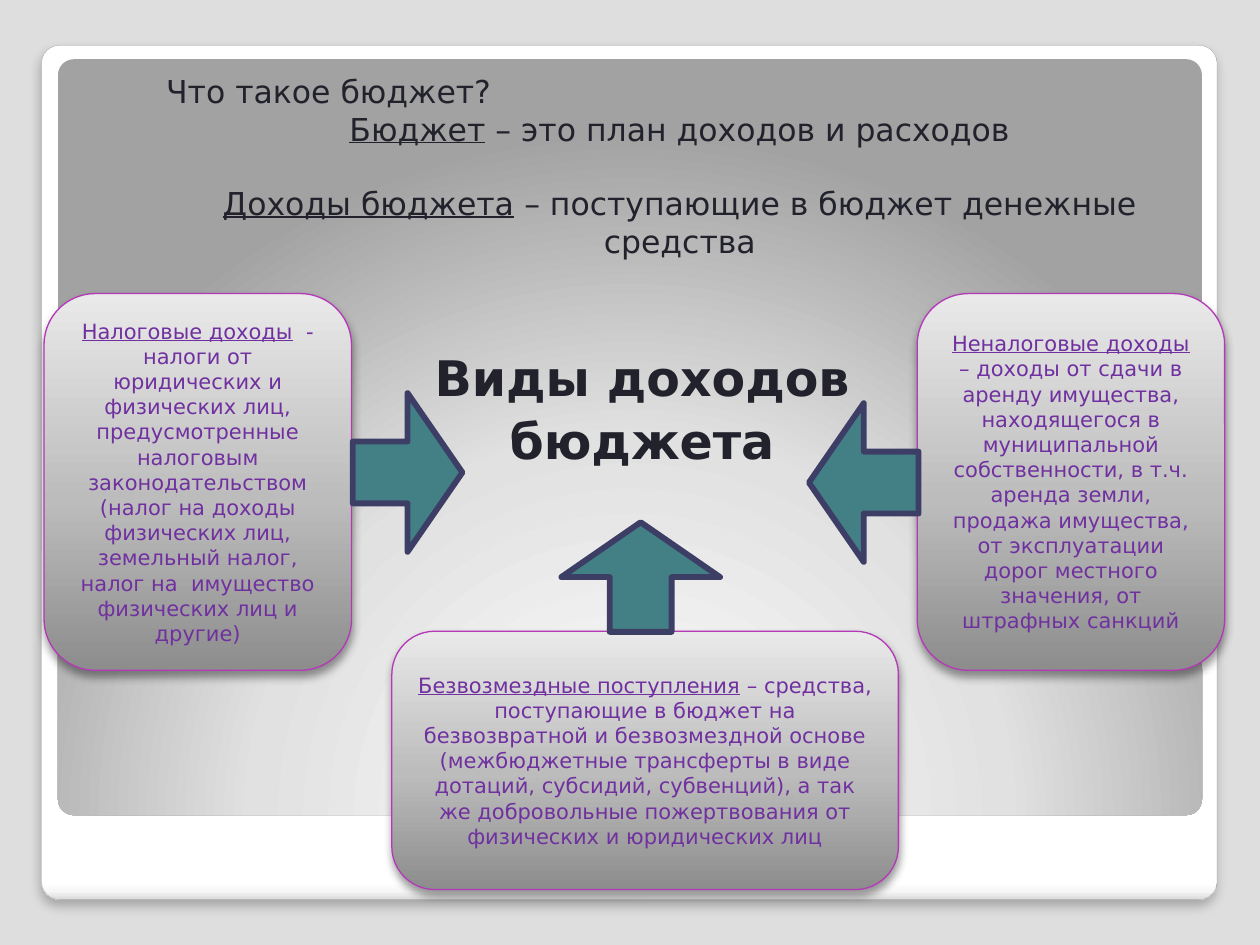
from lxml import etree
from pptx import Presentation
from pptx.dml.color import RGBColor
from pptx.enum.shapes import MSO_SHAPE
from pptx.enum.text import MSO_ANCHOR, MSO_AUTO_SIZE, PP_ALIGN
from pptx.oxml.ns import qn
from pptx.util import Inches, Pt

ROUND_RECT = MSO_SHAPE.ROUNDED_RECTANGLE
ARROW = MSO_SHAPE.RIGHT_ARROW
CENTER = PP_ALIGN.CENTER
FONT = "DejaVu Sans"
COLORS = {
    "background": "DEDEDE", "text": "21222B", "frame": "A4A4A4",
    "card_line": "B438B8", "card_text": "7030A0",
    "arrow": "438086", "arrow_line": "3D3E66", "shadow": "000000",
}
FRAME_STOPS = [(0, "FFFFFF"), (98, "FFFFFF"), (99, "F7F7F7"), (100, "DADADA")]
PANEL_STOPS = [(0, "FFFFFF"), (55, "E1E1E1"), (100, "A2A2A2")]
CARD_STOPS = [(0, "8D8D8D"), (45, "BCBCBC"), (100, "E9E9E9")]

# Left, top, width, height, underlined term, explanation
CARDS = [
    (7.28, 2.33, 2.44, 2.99, "Неналоговые доходы",
     " – доходы от сдачи в аренду имущества, находящегося в муниципальной "
     "собственности, в т.ч. аренда земли, продажа имущества, от эксплуатации "
     "дорог местного значения, от штрафных санкций"),
    (0.35, 2.33, 2.44, 2.99, "Налоговые доходы",
     "  - налоги от юридических и физических лиц, предусмотренные налоговым "
     "законодательством (налог на доходы физических лиц, земельный налог, "
     "налог на  имущество физических лиц и другие)"),
    (3.11, 5.01, 4.02, 2.05, "Безвозмездные поступления",
     " – средства, поступающие в бюджет на безвозвратной и безвозмездной "
     "основе (межбюджетные трансферты в виде дотаций, субсидий, субвенций), "
     "а так же добровольные пожертвования от физических и юридических лиц"),
]
# Left, top, rotation
ARROWS = [(4.65, 3.95, 270), (2.8, 3.12, 0), (6.42, 3.2, 180)]


def rgb(name):
    return RGBColor.from_string(COLORS[name])


def sub(parent, tag, **attrs):
    el = etree.SubElement(parent, qn(tag))
    for key, value in attrs.items():
        el.set(key, str(value))
    return el


def set_gradient(sp, stops, angle=None):
    """Linear gradient at an angle, or a circular one centred below the shape."""
    sp.fill.solid()
    solid = sp._element.spPr.find(qn("a:solidFill"))
    grad = etree.Element(qn("a:gradFill"), rotWithShape="1")
    stop_list = sub(grad, "a:gsLst")
    for pos, color in stops:
        sub(sub(stop_list, "a:gs", pos=pos * 1000), "a:srgbClr", val=color)
    if angle is None:
        circle = sub(grad, "a:path", path="circle")
        sub(circle, "a:fillToRect", l=50000, t=175000, r=50000, b=-75000)
    else:
        sub(grad, "a:lin", ang=angle * 60000, scaled=0)
    solid.getparent().replace(solid, grad)


def set_shadow(sp, alpha, blur, dist):
    effects = sp._element.spPr.find(qn("a:effectLst"))
    outer = sub(effects, "a:outerShdw", blurRad=Pt(blur), dist=Pt(dist),
                dir=90 * 60000, algn="ctr", rotWithShape=0)
    color = sub(outer, "a:srgbClr", val=COLORS["shadow"])
    sub(color, "a:alpha", val=alpha * 1000)


def add_shape(s, kind, left, top, width, height, line=None, weight=0):
    sp = s.shapes.add_shape(kind, Inches(left), Inches(top),
                            Inches(width), Inches(height))
    sp.shadow.inherit = False
    if line:
        sp.line.color.rgb = rgb(line)
        sp.line.width = Pt(weight)
    else:
        sp.line.fill.background()
    return sp


def write(p, text, size, color, term="", align=CENTER, bold=False):
    """Fill a paragraph with an optional underlined term and its text."""
    p.alignment = align
    p.font.name = FONT
    p.font.size = Pt(size)
    p.font.bold = bold
    p.font.color.rgb = rgb(color)
    if term:
        r = p.add_run()
        r.text = term
        r.font.underline = True
    p.add_run().text = text


def add_backdrop(s):
    frame = add_shape(s, ROUND_RECT, 0.33, 0.36, 9.33, 6.78, "frame", 0.16)
    set_gradient(frame, FRAME_STOPS, 90)
    set_shadow(frame, 25, 6, 4)
    panel = add_shape(s, ROUND_RECT, 0.46, 0.47, 9.08, 6)
    set_gradient(panel, PANEL_STOPS)
    for sp in (frame, panel):
        sp.adjustments[0] = 0.021


def add_heading(s):
    body = s.placeholders[1]
    s.shapes._spTree.append(body._element)  # bring in front of the backdrop
    body.left, body.top = Inches(0.28), Inches(2.18)
    body.width, body.height = Inches(9.53), Inches(4.72)
    tf = body.text_frame
    tf.auto_size = MSO_AUTO_SIZE.NONE
    tf.vertical_anchor = MSO_ANCHOR.TOP
    tf.margin_left, tf.margin_right = Inches(0.2), Inches(0.1)
    tf.margin_top, tf.margin_bottom = Inches(0.58), Inches(0.05)
    for p, text in ((tf.paragraphs[0], "Виды доходов"),
                    (tf.add_paragraph(), "бюджета")):
        write(p, text, 28, "text", bold=True)
        p.space_before = Pt(2.5)
        pPr = p._p.get_or_add_pPr()
        pPr.set("marL", "0")
        pPr.set("indent", "0")
        pPr.insert_element_before(etree.Element(qn("a:buNone")),
                                  "a:tabLst", "a:defRPr", "a:extLst")


def add_intro(s):
    box = s.shapes.add_textbox(Inches(1.22), Inches(0.52),
                               Inches(8.35), Inches(1.31))
    tf = box.text_frame
    tf.word_wrap = True
    write(tf.paragraphs[0], "Что такое бюджет?", 18, "text", align=PP_ALIGN.LEFT)
    write(tf.add_paragraph(), " – это план доходов и расходов", 18, "text", "Бюджет")
    p = tf.add_paragraph()
    write(p, " – поступающие в бюджет денежные средства", 18, "text",
          "Доходы бюджета")
    p.space_before = Pt(21)


def add_card(s, left, top, width, height, term, text):
    sp = add_shape(s, ROUND_RECT, left, top, width, height, "card_line", 0.75)
    set_gradient(sp, CARD_STOPS, 270)
    set_shadow(sp, 40, 5.2, 3)
    tf = sp.text_frame
    tf.word_wrap = True
    tf.vertical_anchor = MSO_ANCHOR.MIDDLE
    write(tf.paragraphs[0], text, 12, "card_text", term)


def add_arrow(s, left, top, rotation):
    sp = add_shape(s, ARROW, left, top, 0.87, 1.26, "arrow_line", 3.35)
    sp.fill.solid()
    sp.fill.fore_color.rgb = rgb("arrow")
    sp.adjustments[0], sp.adjustments[1] = 0.39, 0.5
    sp.rotation = rotation


def main():
    prs = Presentation()
    prs.slide_width, prs.slide_height = Inches(10), Inches(7.5)
    s = prs.slides.add_slide(prs.slide_layouts[1])
    s.background.fill.solid()
    s.background.fill.fore_color.rgb = rgb("background")
    title = s.shapes.title._element
    title.getparent().remove(title)

    # Backdrop and texts
    add_backdrop(s)
    add_heading(s)
    add_intro(s)
    # Income types and arrows towards the heading
    for card in CARDS:
        add_card(s, *card)
    for arrow in ARROWS:
        add_arrow(s, *arrow)
    prs.save("out.pptx")


if __name__ == "__main__":
    main()
